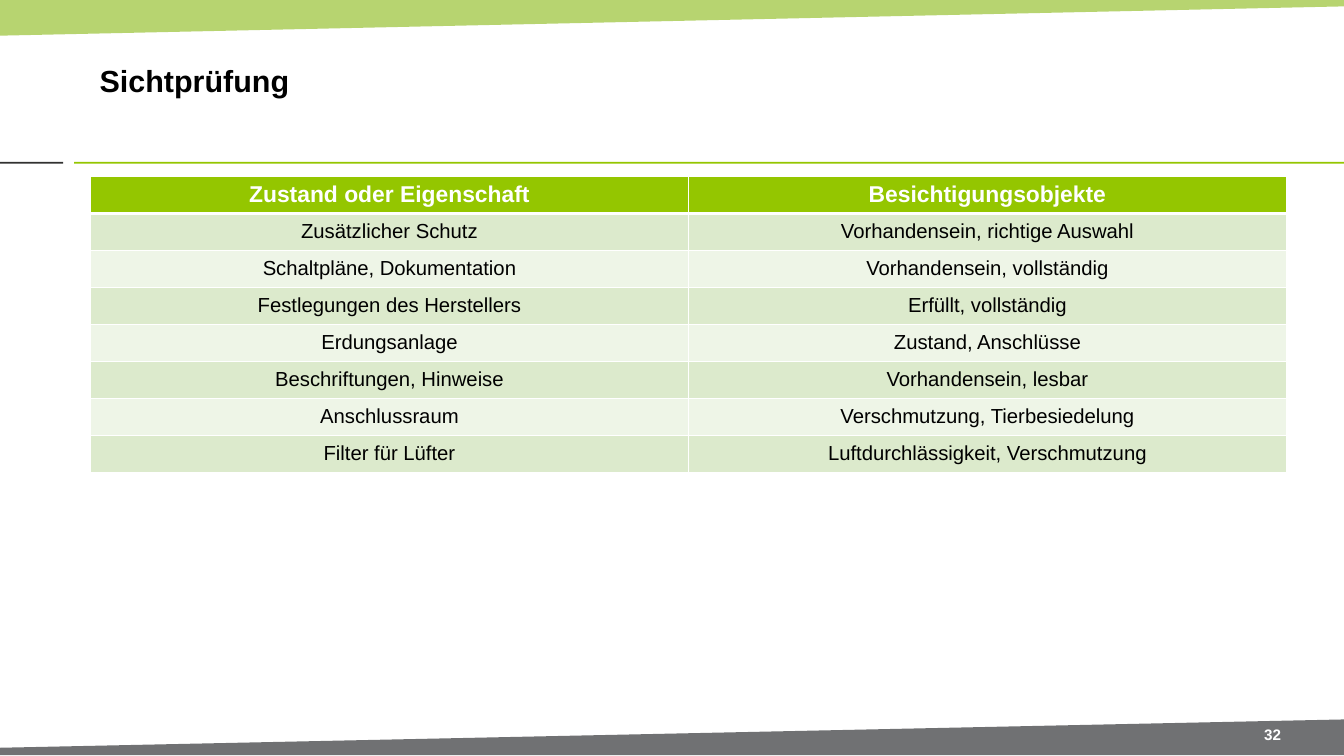
from lxml.etree import SubElement
from pptx import Presentation
from pptx.dml.color import RGBColor
from pptx.enum.shapes import MSO_SHAPE as Preset
from pptx.enum.text import MSO_ANCHOR as Anchor, PP_ALIGN as Align
from pptx.oxml.ns import qn
from pptx.util import Inches, Pt

TITLE = "Sichtprüfung"
PAGE_NUMBER = "32"
ROWS = [
    ("Zustand oder Eigenschaft", "Besichtigungsobjekte"),
    ("Zusätzlicher Schutz", "Vorhandensein, richtige Auswahl"),
    ("Schaltpläne, Dokumentation", "Vorhandensein, vollständig"),
    ("Festlegungen des Herstellers", "Erfüllt, vollständig"),
    ("Erdungsanlage", "Zustand, Anschlüsse"),
    ("Beschriftungen, Hinweise", "Vorhandensein, lesbar"),
    ("Anschlussraum", "Verschmutzung, Tierbesiedelung"),
    ("Filter für Lüfter", "Luftdurchlässigkeit, Verschmutzung"),
]
COLORS = {
    "white": "FFFFFF", "black": "000000", "green": "94C600",
    "top_band": "95C02A", "bottom_band": "707173", "dark_line": "313130",
    "odd_row": "DCEACC", "even_row": "EEF5E7",
}
WIDTH, HEIGHT = 14.7, 8.27
BANDS = [
    ("top_band", 67, [(0, 0), (WIDTH, 0), (WIDTH, 0.07), (0, 0.39)]),
    ("bottom_band", 100, [(WIDTH, 8.26), (0, 8.26), (0, 8.18), (WIDTH, 7.87)]),
]
RULES = [
    ("dark_line", 0, 1.77, 0.69, 0.02),
    ("green", 0.81, 1.77, WIDTH - 0.81, 0.02),
]
TABLE_LEFT, TABLE_TOP, COLUMN_WIDTH, TABLE_HEIGHT = 0.99, 1.93, 6.54, 3.24


def color(name):
    return RGBColor.from_string(COLORS[name])


def write(frame, text, size, ink="black", bold=False, align=Align.CENTER):
    frame.word_wrap = True
    paragraph = frame.paragraphs[0]
    paragraph.alignment = align
    run = paragraph.add_run()
    run.text = text
    run.font.name = "Arial"
    run.font.size = Pt(size)
    run.font.bold = bold
    run.font.color.rgb = color(ink)


def place(shape, left, top, width, height):
    shape.left, shape.top = Inches(left), Inches(top)
    shape.width, shape.height = Inches(width), Inches(height)
    frame = shape.text_frame
    frame.vertical_anchor = Anchor.MIDDLE
    frame.margin_left = frame.margin_right = Inches(0.11)
    frame.margin_top = frame.margin_bottom = Inches(0.06)


def paint(shape, name, opacity=100):
    shape.shadow.inherit = False
    shape.line.fill.background()
    shape.fill.solid()
    shape.fill.fore_color.rgb = color(name)
    if opacity < 100:
        tint = shape._element.spPr.find(".//" + qn("a:srgbClr"))
        SubElement(tint, qn("a:alpha"), val=str(opacity * 1000))


def add_borders(cell, top, bottom):
    properties = cell._tc.get_or_add_tcPr()
    for side, points in (("L", 1), ("R", 1), ("T", top), ("B", bottom)):
        line = SubElement(properties, qn(f"a:ln{side}"), w=str(Pt(points)))
        fill = SubElement(line, qn("a:solidFill"))
        SubElement(fill, qn("a:srgbClr"), val=COLORS["white"])


def add_background(slide):
    for name, opacity, corners in BANDS:
        points = [(Inches(x), Inches(y)) for x, y in corners]
        builder = slide.shapes.build_freeform(*points[0])
        builder.add_line_segments(points[1:], close=True)
        paint(builder.convert_to_shape(), name, opacity)
    for name, *box in RULES:
        paint(slide.shapes.add_shape(Preset.RECTANGLE, *map(Inches, box)), name)


def add_inspection_table(slide):
    columns = len(ROWS[0])
    table = slide.shapes.add_table(
        len(ROWS), columns, Inches(TABLE_LEFT), Inches(TABLE_TOP),
        Inches(COLUMN_WIDTH * columns), Inches(TABLE_HEIGHT),
    ).table
    for column in table.columns:
        column.width = Inches(COLUMN_WIDTH)
    for index, texts in enumerate(ROWS):
        table.rows[index].height = Inches(TABLE_HEIGHT / len(ROWS))
        header = index == 0
        fill = "green" if header else "odd_row" if index % 2 else "even_row"
        for position, text in enumerate(texts):
            cell = table.cell(index, position)
            add_borders(cell, top=3 if index == 1 else 1, bottom=3 if header else 1)
            cell.fill.solid()
            cell.fill.fore_color.rgb = color(fill)
            cell.vertical_anchor = Anchor.MIDDLE
            write(cell.text_frame, text, size=18 if header else 16,
                  ink="white" if header else "black", bold=header)


def main():
    presentation = Presentation()
    presentation.slide_width, presentation.slide_height = Inches(WIDTH), Inches(HEIGHT)
    slide = presentation.slides.add_slide(presentation.slide_layouts[5])
    add_background(slide)

    title = slide.shapes.title
    place(title, 0.98, 0.28, 11.54, 1.19)
    write(title.text_frame, TITLE, size=24, bold=True, align=Align.LEFT)

    number = slide.shapes.add_textbox(0, 0, 0, 0)
    place(number, 13.49, 7.89, 0.86, 0.29)
    write(number.text_frame, PAGE_NUMBER, size=12, ink="white", bold=True)

    add_inspection_table(slide)
    presentation.save("out.pptx")


if __name__ == "__main__":
    main()
